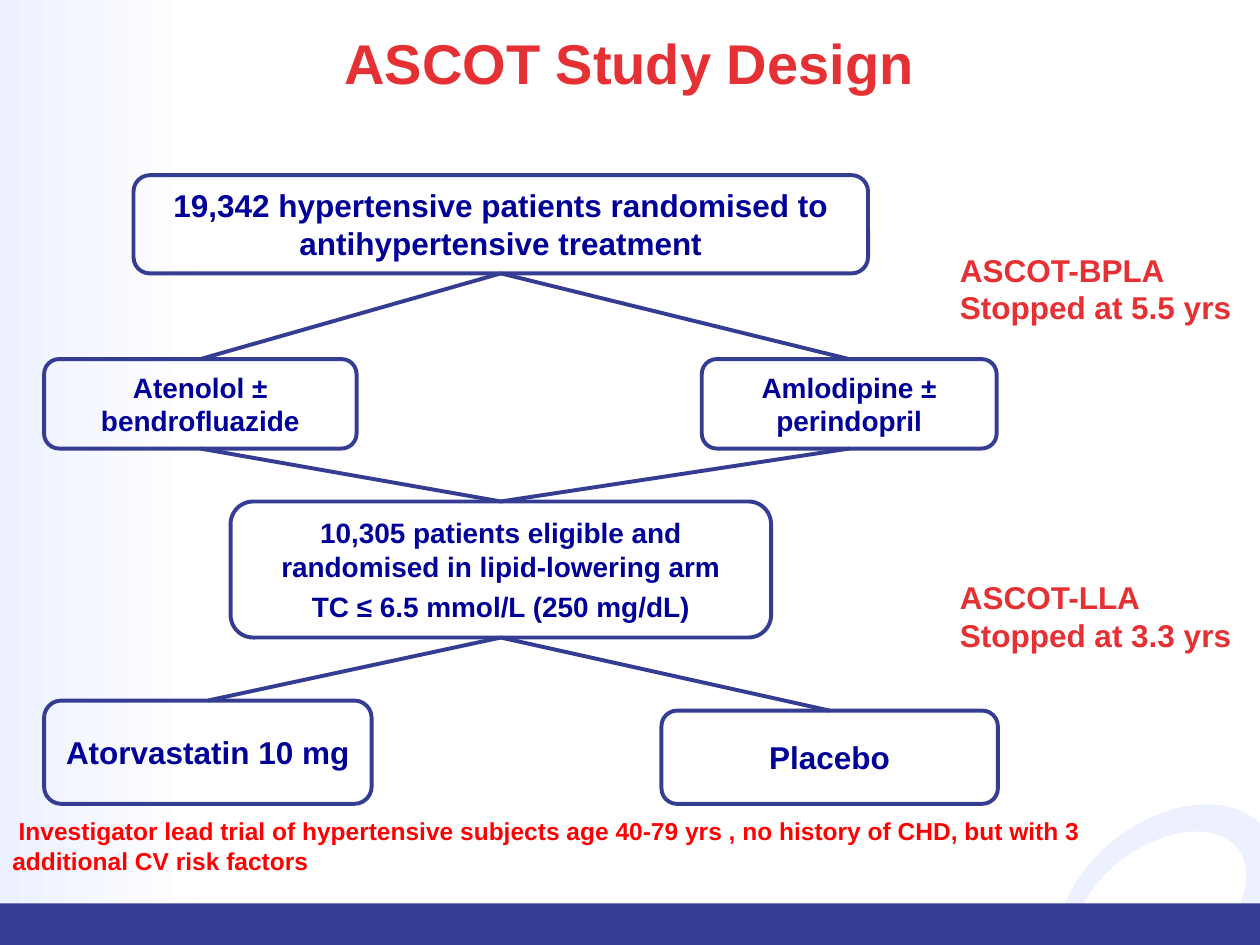
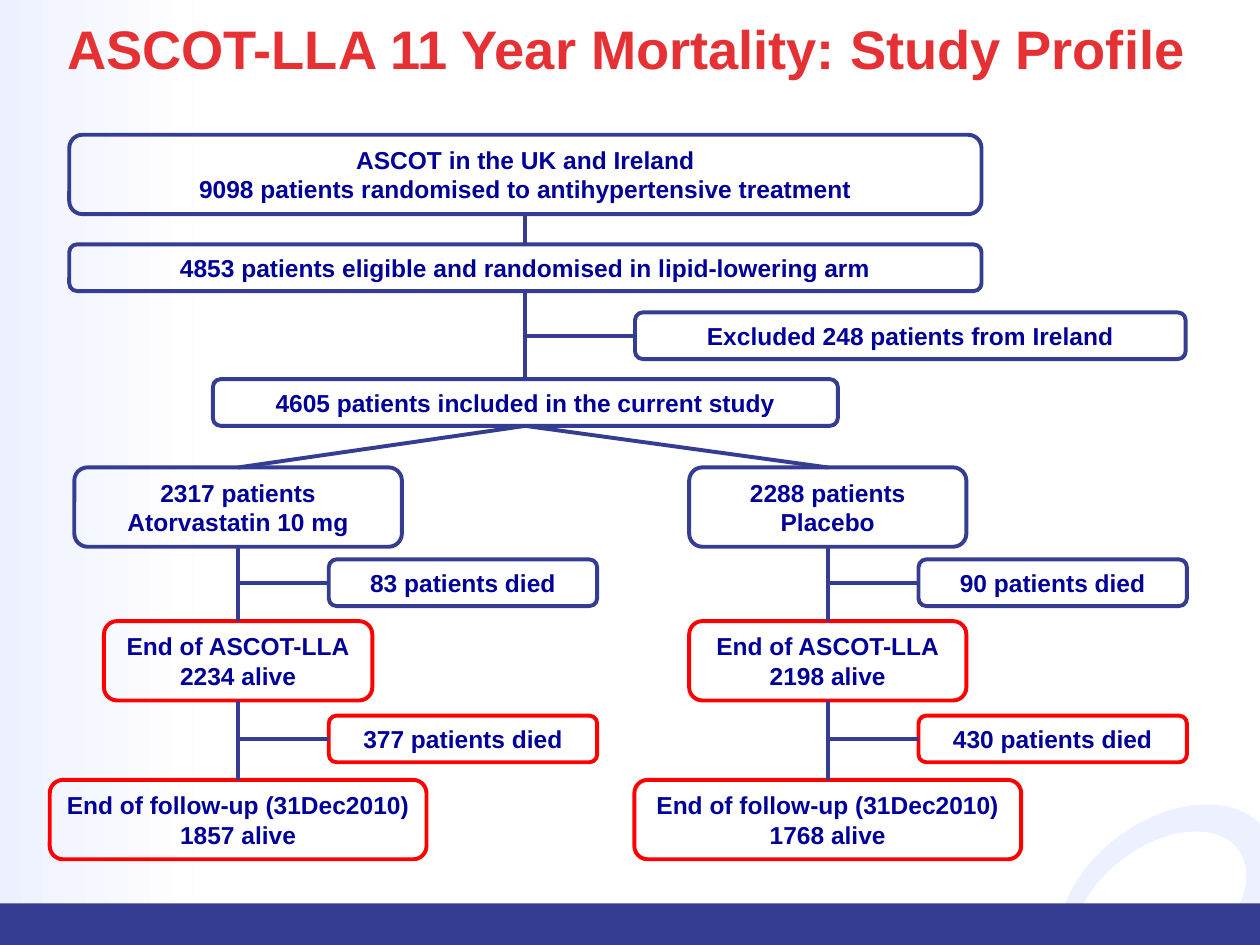
from typing import NamedTuple

from lxml import etree
from pptx import Presentation
from pptx import util as u
from pptx.dml.color import RGBColor
from pptx.enum import shapes, text
from pptx.oxml.ns import qn

# The slide is a grid of 100 columns by 75 rows of square cells.
CELL = u.Inches(0.1)
COLUMNS, ROWS = 100, 75

FONT = "Arial"
NAVY, INK, PALE, WHITE = "353D92", "000099", "EDF0FF", "FFFFFF"
CORAL, RED = "E53134", "FF0000"
TOP, LEFT, BOTTOM = 0, 1, 2  # connection sites of a rounded rectangle


class Area(NamedTuple):
    col: float
    row: float
    cols: float
    rows: float


class Box(NamedTuple):
    area: Area
    words: str
    size: int = 14
    border: str = NAVY


class Label(NamedTuple):
    area: Area
    words: str
    size: int = 18
    color: str = CORAL
    indent: float = 0


class Arm(NamedTuple):
    """One treatment group, followed down a stem with deaths at its side."""
    center: float
    side_col: float
    widths: tuple[float, float, float]
    words: tuple[str, str, str]
    deaths: tuple[str, str]


def cells(n: float) -> int:
    return round(n * CELL)


def place(area: Area) -> tuple[int, ...]:
    return tuple(cells(n) for n in area)


def rgb(color: str) -> RGBColor:
    return RGBColor.from_string(color)


def format_text(tf, size: int, color: str, align) -> None:
    for p in tf.paragraphs:
        p.alignment = align
        for r in p.runs:
            r.font.name, r.font.size, r.font.bold = FONT, u.Pt(size), True
            r.font.color.rgb = rgb(color)


def add_plain(s, kind, area: Area, fill: str, rotation: float = 0):
    sp = s.shapes.add_shape(kind, *place(area))
    sp.shadow.inherit = False
    sp.rotation = rotation
    sp.fill.solid()
    sp.fill.fore_color.rgb = rgb(fill)
    sp.line.fill.background()
    return sp


def decorate_master(prs, s) -> None:
    """Draw the background on a slide, then move it behind the master's placeholders."""
    oval, rect = shapes.MSO_SHAPE.OVAL, shapes.MSO_SHAPE.RECTANGLE
    band_row = 71.7
    ring = add_plain(s, oval, Area(83, 65.1, 19.4, 13.2), PALE, 323.2)
    hole = add_plain(s, oval, Area(84.3, 67.2, 15.5, 9.7), WHITE, 323.2)
    fade = add_plain(s, rect, Area(0, 0, 15.3, 72.2), PALE)
    fade.fill.gradient()
    fade.fill.gradient_angle = 0
    for stop, color in zip(fade.fill.gradient_stops, (PALE, WHITE)):
        stop.color.rgb = rgb(color)
    band = add_plain(s, rect, Area(0, band_row, COLUMNS, ROWS - band_row), NAVY)

    tree = prs.slide_master.shapes._spTree
    for i, sp in enumerate((ring, hole, fade, band)):
        sp._element.nvSpPr.cNvPr.set("id", str(100 + i))
        tree.insert(2 + i, sp._element)


def set_title(s, words: str, area: Area, size: int) -> None:
    sp = s.shapes.title
    sp.left, sp.top, sp.width, sp.height = place(area)
    tf = sp.text_frame
    tf.text = words
    tf.auto_size = text.MSO_AUTO_SIZE.NONE
    tf.vertical_anchor = text.MSO_ANCHOR.MIDDLE
    tf.margin_left = tf.margin_right = tf.margin_top = tf.margin_bottom = 0
    tf.paragraphs[0].line_spacing = 0.9
    format_text(tf, size, CORAL, text.PP_ALIGN.CENTER)


def add_box(s, box: Box):
    sp = s.shapes.add_shape(shapes.MSO_SHAPE.ROUNDED_RECTANGLE, *place(box.area))
    sp.shadow.inherit = False
    sp.fill.background()
    sp.line.color.rgb = rgb(box.border)
    sp.line.width = u.Pt(2.25)
    tf = sp.text_frame
    tf.text = box.words
    tf.word_wrap = True
    tf.vertical_anchor = text.MSO_ANCHOR.MIDDLE
    tf.margin_left = tf.margin_right = cells(0.5)
    format_text(tf, box.size, INK, text.PP_ALIGN.CENTER)
    return sp


def add_label(s, label: Label) -> None:
    tf = s.shapes.add_textbox(*place(label.area)).text_frame
    tf.text = label.words
    tf.word_wrap = True
    format_text(tf, label.size, label.color, text.PP_ALIGN.LEFT)
    if label.indent:
        tf.paragraphs[0]._p.get_or_add_pPr().set("indent", str(cells(label.indent)))


def add_line(s, x: int, y: int):
    """Start a connector at a point; its end is joined to a box by the caller."""
    line = s.shapes.add_connector(shapes.MSO_CONNECTOR.STRAIGHT, x, y, x, y)
    line.line.color.rgb = rgb(NAVY)
    line.line.width = u.Pt(2.25)
    etree.SubElement(line._element.spPr, qn("a:effectLst"))
    return line


def link(s, upper, lower) -> None:
    line = add_line(s, upper.left, upper.top)
    line.begin_connect(upper, BOTTOM)
    line.end_connect(lower, TOP)


def branch(s, stem, side) -> None:
    """Join the line below the stem box to a box at its side."""
    line = add_line(s, stem.left + stem.width // 2, side.top + side.height // 2)
    line.end_connect(side, LEFT)


def draw_design(s) -> None:
    set_title(s, "ASCOT Study Design", Area(8.4, 3, 83.1, 4.6), 32)
    randomised, atenolol, amlodipine, lipid, atorvastatin, placebo = (
        add_box(s, box) for box in (
            Box(Area(10.6, 13.9, 58.3, 7.8),
                "19,342 hypertensive patients randomised to\vantihypertensive treatment", 18),
            Box(Area(3.5, 28.5, 24.8, 7.1), "Atenolol ±\vbendrofluazide", 16),
            Box(Area(55.7, 28.5, 23.4, 7.1), "Amlodipine ±\vperindopril", 16),
            Box(Area(18.3, 39.8, 42.9, 10.8),
                "10,305 patients eligible and\vrandomised in lipid-lowering arm\n"
                "TC ≤ 6.5 mmol/L (250 mg/dL)", 16),
            Box(Area(3.5, 55.6, 26, 8.2), "Atorvastatin 10 mg", 18),
            Box(Area(52.5, 56.4, 26.7, 7.4), "Placebo", 18),
        ))
    lipid.text_frame.paragraphs[1].space_before = u.Pt(4)
    for drug in (atenolol, amlodipine):
        link(s, randomised, drug)
        link(s, drug, lipid)
    for drug in (atorvastatin, placebo):
        link(s, lipid, drug)

    for label in (
        Label(Area(75.2, 19.4, 24.8, 7.1), "ASCOT-BPLA\nStopped at 5.5 yrs"),
        Label(Area(75.2, 45.4, 24.8, 7.1), "ASCOT-LLA\nStopped at 3.3 yrs"),
        Label(Area(0, 64.3, 89.4, 5.7),
              "Investigator lead trial of hypertensive subjects age 40-79 yrs , "
              "no history of CHD, but with 3 additional CV risk factors", 14, RED, 0.5),
    ):
        add_label(s, label)


def draw_arm(s, included, arm: Arm) -> None:
    tall, low, side_width = 6.3, 3.7, 21.3
    stages = [
        add_box(s, Box(Area(arm.center - width / 2, row, width, tall), words, border=border))
        for row, width, words, border in zip(
            (37.1, 49.3, 61.9), arm.widths, arm.words, (NAVY, RED, RED))
    ]
    for upper, lower in zip([included, *stages], stages):
        link(s, upper, lower)
    for stem, row, words, border in zip(stages, (44.4, 56.8), arm.deaths, (NAVY, RED)):
        side = add_box(s, Box(Area(arm.side_col, row, side_width, low), words, border=border))
        branch(s, stem, side)


def draw_profile(s) -> None:
    set_title(s, "ASCOT-LLA 11 Year Mortality: Study Profile", Area(2, 1.8, 95.3, 4.6), 31)
    randomised, eligible, excluded, included = (
        add_box(s, box) for box in (
            Box(Area(5.5, 10.7, 72.4, 6.3),
                "ASCOT in the UK and Ireland\n"
                "9098 patients randomised to antihypertensive treatment"),
            Box(Area(5.5, 19.4, 72.4, 3.7),
                "4853 patients eligible and randomised in lipid-lowering arm"),
            Box(Area(50.4, 24.8, 43.7, 3.7), "Excluded 248 patients from Ireland"),
            Box(Area(16.9, 30.1, 49.6, 3.7), "4605 patients included in the current study"),
        ))
    link(s, randomised, eligible)
    link(s, eligible, included)
    branch(s, eligible, excluded)

    for arm in (
        Arm(18.9, 26.1, (26, 21.3, 29.9),
            ("2317 patients\vAtorvastatin 10 mg", "End of ASCOT-LLA\v2234 alive",
             "End of follow-up (31Dec2010)\v1857 alive"),
            ("83 patients died", "377 patients died")),
        Arm(65.7, 72.9, (22, 22, 30.7),
            ("2288 patients\vPlacebo", "End of ASCOT-LLA\v2198 alive",
             "End of follow-up (31Dec2010)\v1768 alive"),
            ("90 patients died", "430 patients died")),
    ):
        draw_arm(s, included, arm)


def main() -> None:
    prs = Presentation()
    prs.slide_width, prs.slide_height = cells(COLUMNS), cells(ROWS)
    title_only = prs.slide_layouts[5]
    design, profile = (prs.slides.add_slide(title_only) for _ in range(2))
    decorate_master(prs, design)
    draw_design(design)
    draw_profile(profile)
    prs.save("out.pptx")


if __name__ == "__main__":
    main()
